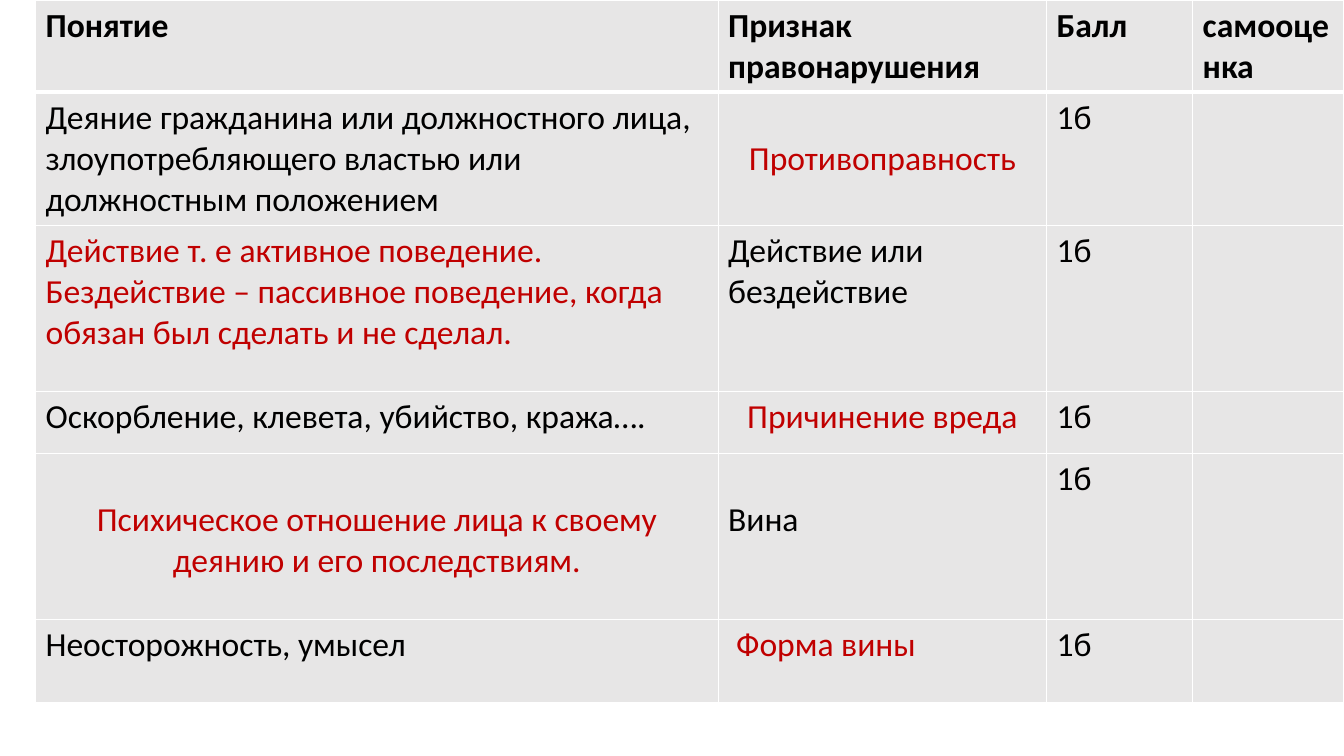
import pptx
import pptx.util
import pptx.dml.color
import pptx.enum.text
import pptx.oxml

Cm = pptx.util.Cm
Pt = pptx.util.Pt
NS = "http://schemas.openxmlformats.org/drawingml/2006/main"
BLACK, RED, GREY, WHITE = "000000", "C00000", "E7E6E6", "FFFFFF"
LINE = 1.03


def color(code):
    return pptx.dml.color.RGBColor.from_string(code)


class Deck:
    font = "Calibri"
    size = 24

    def __init__(self):
        self.prs = pptx.Presentation()
        self.prs.slide_width = Cm(33.87)
        self.prs.slide_height = Cm(19.05)
        self.slide = self.prs.slides.add_slide(self.prs.slide_layouts[6])

    def table(self, left, top, cols, rows):
        frame = self.slide.shapes.add_table(
            len(rows), len(cols), Cm(left), Cm(top),
            Cm(sum(cols)), Cm(sum(rows)))
        grid = frame.table
        grid.horz_banding = False
        for col, width in zip(grid.columns, cols):
            col.width = Cm(width)
        for row, height in zip(grid.rows, rows):
            row.height = Cm(height)
        return grid

    def border(self, cell, side, width):
        return pptx.oxml.parse_xml(
            f'<a:ln{side} xmlns:a="{NS}" w="{Pt(width)}"><a:solidFill>'
            f'<a:srgbClr val="{WHITE}"/></a:solidFill></a:ln{side}>')

    def cell(self, cell, text, ink=BLACK, bold=False, center=False,
             drop=0, shift=0, top=1, base=1):
        cell.fill.solid()
        cell.fill.fore_color.rgb = color(GREY)
        props = cell._tc.get_or_add_tcPr()
        widths = {"L": 1, "R": 1, "T": top, "B": base}
        for spot, (side, width) in enumerate(widths.items()):
            props.insert(spot, self.border(cell, side, width))
        cell.margin_top = Cm(0.13 + drop * LINE)
        cell.margin_left = Cm(0.25 + shift)
        cell.text_frame.text = text
        for para in cell.text_frame.paragraphs:
            if center:
                para.alignment = pptx.enum.text.PP_ALIGN.CENTER
            para.font.size = Pt(self.size)
            for run in para.runs:
                run.font.name = self.font
                run.font.size = Pt(self.size)
                run.font.bold = bold
                run.font.color.rgb = color(ink)


def main():
    deck = Deck()
    heads = ["Понятие", "Признак правонарушения", "Балл", "самооценка"]
    pairs = [
        (("Деяние гражданина или должностного лица, злоупотребляющего "
          "властью или должностным положением", {}),
         ("Противоправность", dict(ink=RED, center=True, drop=1))),
        (("Действие т. е активное поведение.\nБездействие – пассивное "
          "поведение, когда обязан был сделать и не сделал.",
          dict(ink=RED)),
         ("Действие или бездействие", {})),
        (("Оскорбление, клевета, убийство, кража….", {}),
         ("Причинение вреда", dict(ink=RED, center=True))),
        (("Психическое отношение лица к своему деянию и его последствиям.",
          dict(ink=RED, center=True, drop=1)),
         ("Вина", dict(drop=1))),
        (("Неосторожность, умысел", {}),
         ("Форма вины", dict(ink=RED, shift=0.2))),
    ]
    grid = deck.table(0.9, 0, [17.2, 8.28, 3.68, 3.81],
                      [2.32, 3.35, 4.18, 1.57, 4.18, 2.1])
    for col, head in enumerate(heads):
        deck.cell(grid.cell(0, col), head, bold=True, base=3)
    for row, pair in enumerate(pairs, 1):
        top = 3 if row == 1 else 1
        for col, (text, style) in enumerate([*pair, ("1б", {}), ("", {})]):
            deck.cell(grid.cell(row, col), text, top=top, **style)
    deck.prs.save("out.pptx")


if __name__ == "__main__":
    main()
